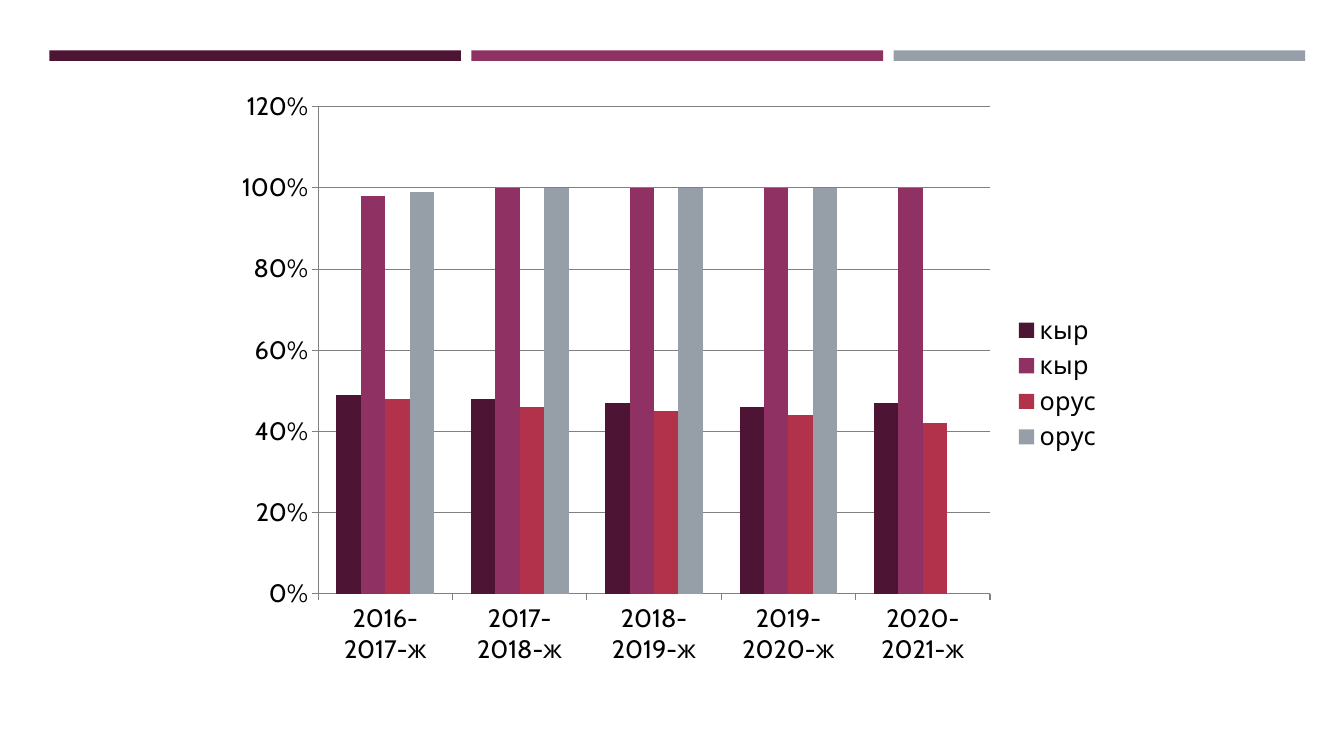
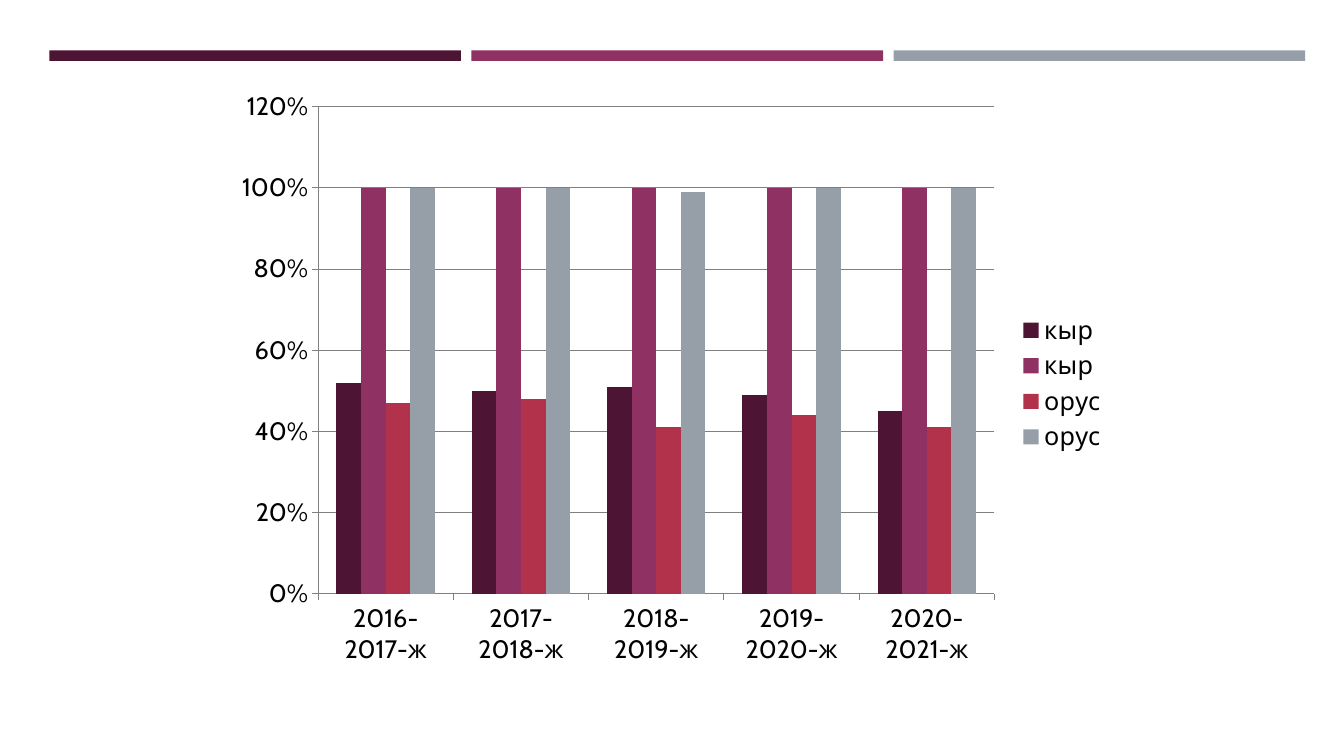
from dataclasses import dataclass

from pptx import Presentation
from pptx.chart.data import CategoryChartData as Data
from pptx.dml.color import RGBColor as RGB
from pptx.enum.chart import XL_CHART_TYPE as Kind
from pptx.enum.chart import XL_LEGEND_POSITION as Side
from pptx.enum.chart import XL_TICK_MARK as Tick
from pptx.enum.shapes import MSO_SHAPE as Form
from pptx.oxml import parse_xml
from pptx.oxml.ns import nsdecls, qn
from pptx.util import Pt


@dataclass(frozen=True)
class Theme:
    plum: RGB = RGB.from_string("4D1434")
    rose: RGB = RGB.from_string("903163")
    red: RGB = RGB.from_string("B2324B")
    gray: RGB = RGB.from_string("969FA7")
    rule: RGB = RGB.from_string("808080")
    ink: RGB = RGB.from_string("000000")
    face: str = "Cabin"
    size: int = 18


LOOK = Theme()
WIDE, HIGH = 960, 540
BAND_BOX = (35.3, 36, 897, 7.5)
CHART_BOX = (160, 57, 640, 427)
YEARS = [f"{year}-{year + 1}-ж" for year in range(2016, 2021)]
NAMES = ("кыр", "кыр", "орус", "орус")
TINTS = (LOOK.plum, LOOK.rose, LOOK.red, LOOK.gray)

# Each slide: plot width as a share of the chart, then one row per series
SLIDES = (
    (0.75, (
        (0.49, 0.48, 0.47, 0.46, 0.47),
        (0.98, 1, 1, 1, 1),
        (0.48, 0.46, 0.45, 0.44, 0.42),
        (0.99, 1, 1, 1, None),
    )),
    (0.755, (
        (0.52, 0.5, 0.51, 0.49, 0.45),
        (1, 1, 1, 1, 1),
        (0.47, 0.48, 0.41, 0.44, 0.41),
        (1, 1, 0.99, 1, 1),
    )),
)


def paint(part, tint):
    part.fill.solid()
    part.fill.fore_color.rgb = tint


def draw_bands(slide, box, gap=7.5):
    left, top, width, height = box
    tints = (LOOK.plum, LOOK.rose, LOOK.gray)
    span = (width - gap * (len(tints) - 1)) / len(tints)
    for col, tint in enumerate(tints):
        band = slide.shapes.add_shape(
            Form.RECTANGLE, Pt(left + col * (span + gap)), Pt(top),
            Pt(span), Pt(height))
        band.shadow.inherit = False
        band.line.fill.background()
        paint(band, tint)


def set_font(font, size=LOOK.size, tint=LOOK.ink, face=LOOK.face):
    font.size, font.name = Pt(size), face
    font.color.rgb = tint


def set_line(line):
    line.width = Pt(0.75)
    line.color.rgb = LOOK.rule


def pin(node, index, inner=False, **sides):
    """Fix a chart part's place by shares of the chart's width and height."""
    for old in node.findall(qn("c:layout")):
        node.remove(old)
    target = '<c:layoutTarget val="inner"/>' if inner else ""
    modes = "".join(f'<c:{key}Mode val="edge"/>' for key in "xy")
    spots = "".join(f'<c:{key} val="{val:.3f}"/>' for key, val in sides.items())
    node.insert(index, parse_xml(
        f'<c:layout {nsdecls("c")}><c:manualLayout>{target}{modes}{spots}'
        '</c:manualLayout></c:layout>'))


def draw_chart(slide, box, share, rows):
    data = Data(number_format="0%")
    data.categories = YEARS
    for name, row in zip(NAMES, rows):
        data.add_series(name, row)
    frame = slide.shapes.add_chart(
        Kind.COLUMN_CLUSTERED, *(Pt(part) for part in box), data)
    chart = frame.chart
    chart.has_title = False
    set_font(chart.font)

    plot = chart.plots[0]
    plot.gap_width, plot.overlap, plot.vary_by_categories = 150, 0, False
    for series, tint in zip(plot.series, TINTS):
        paint(series.format, tint)

    for axis in (chart.category_axis, chart.value_axis):
        axis.major_tick_mark, axis.minor_tick_mark = Tick.OUTSIDE, Tick.NONE
        set_line(axis.format.line)
    scale = chart.value_axis
    scale.minimum_scale, scale.maximum_scale, scale.major_unit = 0, 1.2, 0.2
    scale.tick_labels.number_format = "0%"
    scale.tick_labels.number_format_is_linked = False
    scale.has_major_gridlines = True
    set_line(scale.major_gridlines.format.line)

    chart.has_legend = True
    legend = chart.legend
    legend.position, legend.include_in_layout = Side.RIGHT, False
    area = plot._element.getparent()
    start = 0.105
    pin(area, 0, inner=True, x=start, y=0.045, w=share, h=0.815)
    pin(legend._element, 1, x=start + share + 0.023, y=0.385)


def main():
    deck = Presentation()
    deck.slide_width, deck.slide_height = Pt(WIDE), Pt(HIGH)
    for share, rows in SLIDES:
        slide = deck.slides.add_slide(deck.slide_layouts[6])
        draw_bands(slide, BAND_BOX)
        draw_chart(slide, CHART_BOX, share, rows)
    deck.save("out.pptx")


if __name__ == "__main__":
    main()
